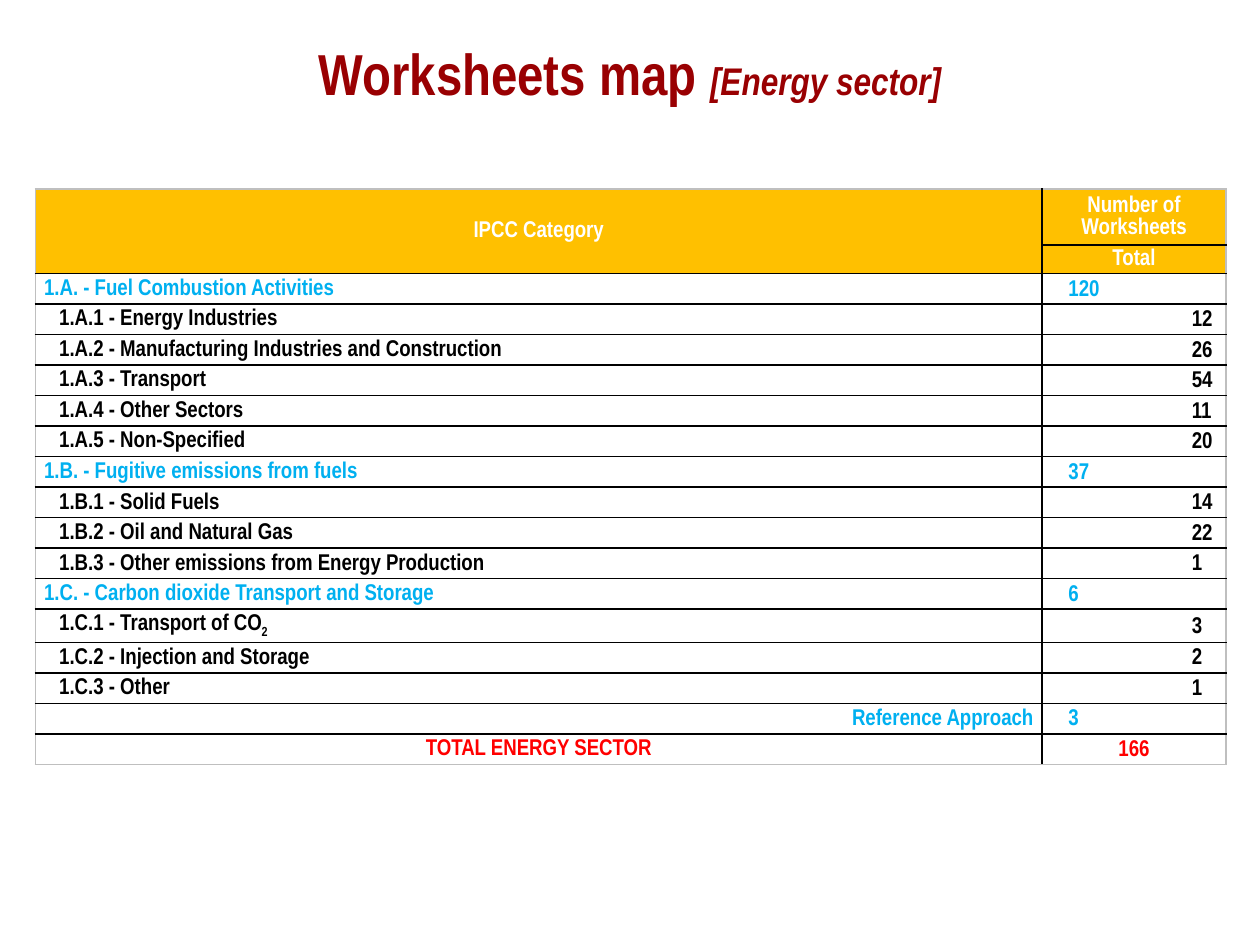
"""Build the worksheets map slide for the energy sector."""
from lxml import etree
from pptx import Presentation
from pptx import util as u
from pptx.dml.color import RGBColor
from pptx.enum import text
from pptx.oxml.ns import qn

HUES = {"title": "990002", "head": "FFC000", "white": "FFFFFF", "group": "00B0F0",
        "item": "000000", "total": "FF0000", "line": "000000", "edge": "BFBFBF"}
FACE = "Arial Narrow"
LEFT, MID, RIGHT = text.PP_ALIGN.LEFT, text.PP_ALIGN.CENTER, text.PP_ALIGN.RIGHT

ROWS = [
    ("group", "1.A. - Fuel Combustion Activities", "120"),
    ("item", "1.A.1 - Energy Industries", "12"),
    ("item", "1.A.2 - Manufacturing Industries and Construction", "26"),
    ("item", "1.A.3 - Transport", "54"),
    ("item", "1.A.4 - Other Sectors", "11"),
    ("item", "1.A.5 - Non-Specified", "20"),
    ("group", "1.B. - Fugitive emissions from fuels", "37"),
    ("item", "1.B.1 - Solid Fuels", "14"),
    ("item", "1.B.2 - Oil and Natural Gas", "22"),
    ("item", "1.B.3 - Other emissions from Energy Production", "1"),
    ("group", "1.C. - Carbon dioxide Transport and Storage", "6"),
    ("item", "1.C.1 - Transport of CO", "3"),
    ("item", "1.C.2 - Injection and Storage", "2"),
    ("item", "1.C.3 - Other", "1"),
    ("group", "Reference Approach", "3"),
    ("total", "TOTAL ENERGY SECTOR", "166"),
]
LAST = len(ROWS) + 1


def style(para, size, hue):
    font = para.font
    font.name, font.bold = FACE, True
    if size:
        font.size = u.Pt(size)
    font.color.rgb = RGBColor.from_string(HUES[hue])


def write(row, col, words, hue, align=MID, dent=0):
    cell = table.cell(row, col)
    body = row > 1
    cell.vertical_anchor = text.MSO_ANCHOR.MIDDLE
    side = 0.07 if body and col == 0 else 0.01
    cell.margin_left = cell.margin_right = u.Inches(side)
    cell.margin_top = u.Inches(0 if side == 0.07 else 0.01)
    cell.margin_bottom = 0
    props = cell._tc.get_or_add_tcPr()
    outer = {"lnL": col == 0, "lnR": col == 1, "lnT": row == 0, "lnB": row == LAST}
    for tag, edge in outer.items():
        line = etree.SubElement(props, qn("a:" + tag), w=str(u.Pt(1)))
        paint = etree.SubElement(line, qn("a:solidFill"))
        etree.SubElement(paint, qn("a:srgbClr"), val=HUES["edge" if edge else "line"])
    if body:
        cell.fill.background()
    else:
        cell.fill.solid()
        cell.fill.fore_color.rgb = RGBColor.from_string(HUES["head"])
    para = cell.text_frame.paragraphs[0]
    para.alignment = align
    if body:
        para.line_spacing = 1.07
    if dent:
        para._p.get_or_add_pPr().set("marL", str(u.Inches(dent)))
    if words:
        para.add_run().text = words
    style(para, 13, hue)
    return para


deck = Presentation()
deck.slide_width, deck.slide_height = u.Inches(10), u.Inches(7.5)
slide = deck.slides.add_slide(deck.slide_layouts[6])

box = slide.shapes.add_textbox(0, u.Inches(0.25), u.Inches(10), u.Inches(0.59))
box.text_frame.word_wrap = True
title = box.text_frame.paragraphs[0]
title.alignment = MID
for words, size, slant in (("Worksheets map ", 33, False), ("[Energy sector]", 22, True)):
    run = title.add_run()
    run.text = words
    run.font.size, run.font.italic = u.Pt(size), slant
style(title, None, "title")

frame = slide.shapes.add_table(LAST + 1, 2, u.Inches(0.28), u.Inches(1.5),
                               u.Inches(9.45), u.Inches(4.53))
table = frame.table
table.first_row = table.horz_banding = False
for col, wide in enumerate((7.99, 1.46)):
    table.columns[col].width = u.Inches(wide)
for row, high in enumerate([0.44, 0.22] + [0.24] * len(ROWS)):
    table.rows[row].height = u.Inches(high)

table.cell(0, 0).merge(table.cell(1, 0))
for row, pair in enumerate((("IPCC Category", "Number of Worksheets"), ("", "Total"))):
    for col, words in enumerate(pair):
        write(row, col, words, "white")

sides = {"Reference Approach": RIGHT, "TOTAL ENERGY SECTOR": MID}
dents = {"group": (0, 0.2), "item": (0.12, 1.18), "total": (0, 0)}
for row, (kind, name, count) in enumerate(ROWS, 2):
    near, far = dents[kind]
    para = write(row, 0, name, kind, sides.get(name, LEFT), near)
    if name.endswith("CO"):
        sub = para.add_run()
        sub.text = "2"
        sub._r.get_or_add_rPr().set("baseline", "-25000")
    write(row, 1, count, kind, MID if kind == "total" else LEFT, far)

deck.save("out.pptx")
